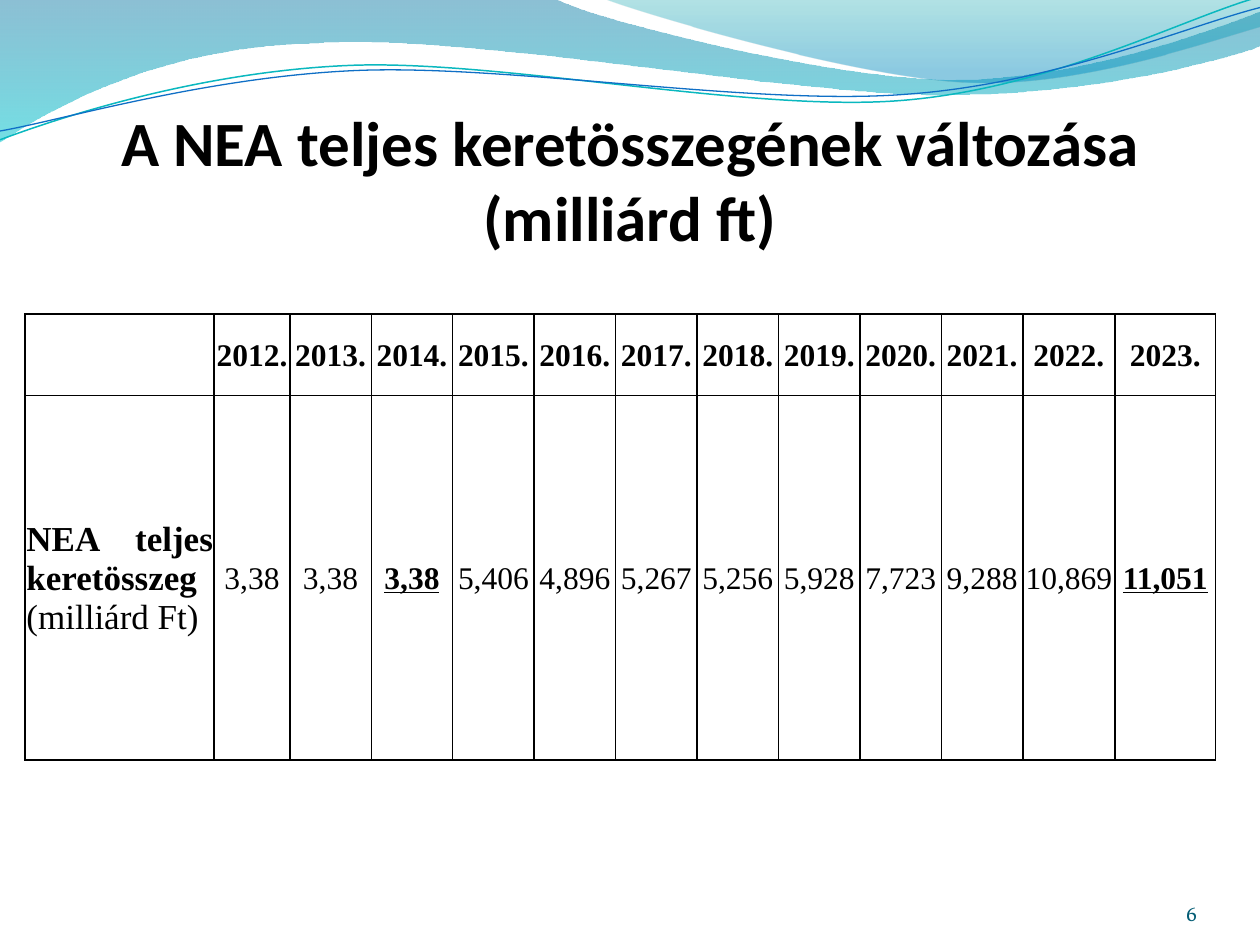
from dataclasses import dataclass
from typing import Optional

import pptx
import pptx.dml.color
import pptx.enum.text
import pptx.oxml.ns
import pptx.util
from lxml import etree

Inches, Pt = pptx.util.Inches, pptx.util.Pt
RGBColor = pptx.dml.color.RGBColor
ALIGN = pptx.enum.text.PP_ALIGN
ANCHOR = pptx.enum.text.MSO_ANCHOR
qn = pptx.oxml.ns.qn

BLACK = RGBColor(0x00, 0x00, 0x00)
WHITE = RGBColor(0xFF, 0xFF, 0xFF)
DEEP_BLUE = RGBColor(0x00, 0x74, 0xA1)
TURQUOISE = RGBColor(0x00, 0xC6, 0xCF)
TEAL = RGBColor(0x00, 0xA1, 0xA9)
SKY_BLUE = RGBColor(0x00, 0x8B, 0xBF)
LINE_TEAL = RGBColor(0x0A, 0xB8, 0xBF)
LINE_BLUE = RGBColor(0x0F, 0x6F, 0xC6)
NUMBER_TEAL = RGBColor(0x04, 0x5D, 0x75)

SERIF = "Times New Roman"
TABLE_WIDTH = 9.45
LABEL_WIDTH = 1.5


@dataclass
class Stop:
    position: float
    color: RGBColor
    opacity: int


@dataclass
class Wave:
    """A path of (x, y) lines and (x1, y1, x2, y2, x, y) curves, in inches."""
    start: tuple
    segments: list
    stops: Optional[list] = None
    color: Optional[RGBColor] = None
    width: float = 0


@dataclass
class Entry:
    year: str
    amount: str
    width: Optional[float] = None  # None shares the remaining table width
    highlight: bool = False


WAVES = [
    Wave((0, 0), [(4.4, -0.01), (4.76, 0.17, 6.64, 0.63, 7.58, 0.63),
                  (8.53, 0.63, 9.58, 0.26, 10, 0.09), (10.01, 0.36),
                  (9.83, 0.44, 8.7, 0.76, 7.46, 0.75),
                  (6.22, 0.75, 3.82, 0.28, 2.57, 0.34),
                  (1.29, 0.36, 0.46, 0.83, -0.01, 1.13), (0, 0)],
         stops=[Stop(0, DEEP_BLUE, 45), Stop(1, TURQUOISE, 55)]),
    Wave((4.79, -0.01), [(5.09, 0.11, 6.82, 0.62, 7.69, 0.65),
                         (8.56, 0.69, 9.61, 0.32, 10, 0.21),
                         (10, 0), (4.79, -0.01)],
         stops=[Stop(0, TEAL, 30), Stop(0.8, SKY_BLUE, 45)]),
    Wave((0, 1.11), [(0.48, 0.93, 1.58, 0.57, 2.77, 0.52),
                     (3.95, 0.47, 5.93, 0.89, 7.13, 0.8),
                     (8.33, 0.71, 9.38, 0.15, 9.98, -0.02)],
         color=LINE_TEAL, width=0.85),
    Wave((0, 1.04), [(0.47, 0.96, 1.64, 0.61, 2.83, 0.56),
                     (4.03, 0.51, 5.97, 0.84, 7.17, 0.75),
                     (8.36, 0.67, 9.41, 0.21, 10, 0.06)],
         color=LINE_BLUE, width=0.75),
]

ENTRIES = [
    Entry("2012.", "3,38", 0.6), Entry("2013.", "3,38"),
    Entry("2014.", "3,38", highlight=True), Entry("2015.", "5,406"),
    Entry("2016.", "4,896"), Entry("2017.", "5,267"),
    Entry("2018.", "5,256"), Entry("2019.", "5,928"),
    Entry("2020.", "7,723"), Entry("2021.", "9,288"),
    Entry("2022.", "10,869", 0.73), Entry("2023.", "11,051", 0.8, True),
]


def bend_curves(sp, wave: Wave) -> None:
    """Join each three line steps of a curve segment into one Bezier curve."""
    steps = iter(sp._element.spPr.findall(".//" + qn("a:lnTo")))
    for seg in wave.segments:
        first = next(steps)
        if len(seg) == 2:
            continue
        curve = etree.Element(qn("a:cubicBezTo"))
        first.addprevious(curve)
        for step in (first, next(steps), next(steps)):
            curve.append(step[0])
            step.getparent().remove(step)


def draw_wave(s, wave: Wave) -> None:
    points = [(Inches(seg[i]), Inches(seg[i + 1]))
              for seg in [wave.start] + wave.segments
              for i in range(0, len(seg), 2)]
    builder = s.shapes.build_freeform(*points[0], scale=1.0)
    builder.add_line_segments(points[1:], close=wave.stops is not None)
    sp = builder.convert_to_shape()
    bend_curves(sp, wave)
    sp.shadow.inherit = False
    if wave.stops is None:
        sp.fill.background()
        sp.line.color.rgb = wave.color
        sp.line.width = Pt(wave.width)
        return
    sp.line.fill.background()
    sp.fill.gradient()
    sp.fill.gradient_angle = 270
    for gs, stop in zip(sp.fill.gradient_stops, wave.stops):
        gs.position = stop.position
        gs.color.rgb = stop.color
    colors = sp._element.spPr.findall(".//" + qn("a:gs") + "/" + qn("a:srgbClr"))
    for clr, stop in zip(colors, wave.stops):
        etree.SubElement(clr, qn("a:alpha"), val=str(stop.opacity * 1000))


def style_run(r, font: str, size: float, color: RGBColor = BLACK,
              bold: bool = False, underline: bool = False) -> None:
    f = r.font
    f.name, f.size, f.bold, f.underline = font, Pt(size), bold, underline
    f.color.rgb = color


def add_text(s, text: str, box: tuple, align, top_inset: float, font: str,
             size: float, color: RGBColor, bold: bool = False) -> None:
    tf = s.shapes.add_textbox(*(Inches(v) for v in box)).text_frame
    tf.word_wrap = True
    tf.vertical_anchor = ANCHOR.BOTTOM
    tf.margin_left = tf.margin_right = tf.margin_bottom = 0
    tf.margin_top = Inches(top_inset)
    p = tf.paragraphs[0]
    p.text = text
    p.alignment = align
    style_run(p.runs[0], font, size, color, bold)


def format_cell(cell) -> None:
    cell.fill.solid()
    cell.fill.fore_color.rgb = WHITE
    cell.vertical_anchor = ANCHOR.MIDDLE
    cell.margin_left = cell.margin_right = cell.margin_top = Inches(0.01)
    cell.margin_bottom = 0
    tc_pr = cell._tc.get_or_add_tcPr()
    for i, side in enumerate(("lnL", "lnR", "lnT", "lnB")):
        ln = etree.Element(qn("a:" + side), w=str(Pt(1)))
        fill = etree.SubElement(ln, qn("a:solidFill"))
        etree.SubElement(fill, qn("a:srgbClr"), val=str(BLACK))
        tc_pr.insert(i, ln)


def fill_cell(cell, text: str, bold: bool, underline: bool = False) -> None:
    p = cell.text_frame.paragraphs[0]
    p.text = text
    p.alignment = ALIGN.CENTER
    style_run(p.runs[0], SERIF, 18, bold=bold, underline=underline)


def add_budget_table(s) -> None:
    fixed = [e.width for e in ENTRIES if e.width]
    shared = (TABLE_WIDTH - LABEL_WIDTH - sum(fixed)) / (len(ENTRIES) - len(fixed))
    widths = [LABEL_WIDTH] + [e.width or shared for e in ENTRIES]
    table = s.shapes.add_table(2, len(widths), Inches(0.2), Inches(2.49),
                               Inches(TABLE_WIDTH), Inches(3.54)).table
    table.first_row = table.horz_banding = False
    for col, width in zip(table.columns, widths):
        col.width = Inches(width)
    for row, height in zip(table.rows, (0.65, 2.89)):
        row.height = Inches(height)
    for cell in table.iter_cells():
        format_cell(cell)

    p = table.cell(1, 0).text_frame.paragraphs[0]
    p.alignment = ALIGN.JUSTIFY
    for text, bold in (("NEA teljes keretösszeg ", True), ("(milliárd Ft)", False)):
        r = p.add_run()
        r.text = text
        style_run(r, SERIF, 20, bold=bold)
    for i, e in enumerate(ENTRIES, start=1):
        fill_cell(table.cell(0, i), e.year, True)
        fill_cell(table.cell(1, i), e.amount, e.highlight, e.highlight)


def main() -> None:
    prs = pptx.Presentation()
    prs.slide_width, prs.slide_height = Inches(10), Inches(7.5)
    s = prs.slides.add_slide(prs.slide_layouts[6])

    # Wave decoration along the top
    for wave in WAVES:
        draw_wave(s, wave)

    # Title, table and page number
    add_text(s, "A NEA teljes keretösszegének változása (milliárd ft)",
             (0.5, 0.77, 9, 1.25), ALIGN.CENTER, 0.05, "Calibri", 36, BLACK, True)
    add_budget_table(s)
    add_text(s, "6", (8.67, 6.95, 0.83, 0.4), ALIGN.RIGHT, 0, "Vollkorn", 12, NUMBER_TEAL)

    prs.save("out.pptx")


if __name__ == "__main__":
    main()
